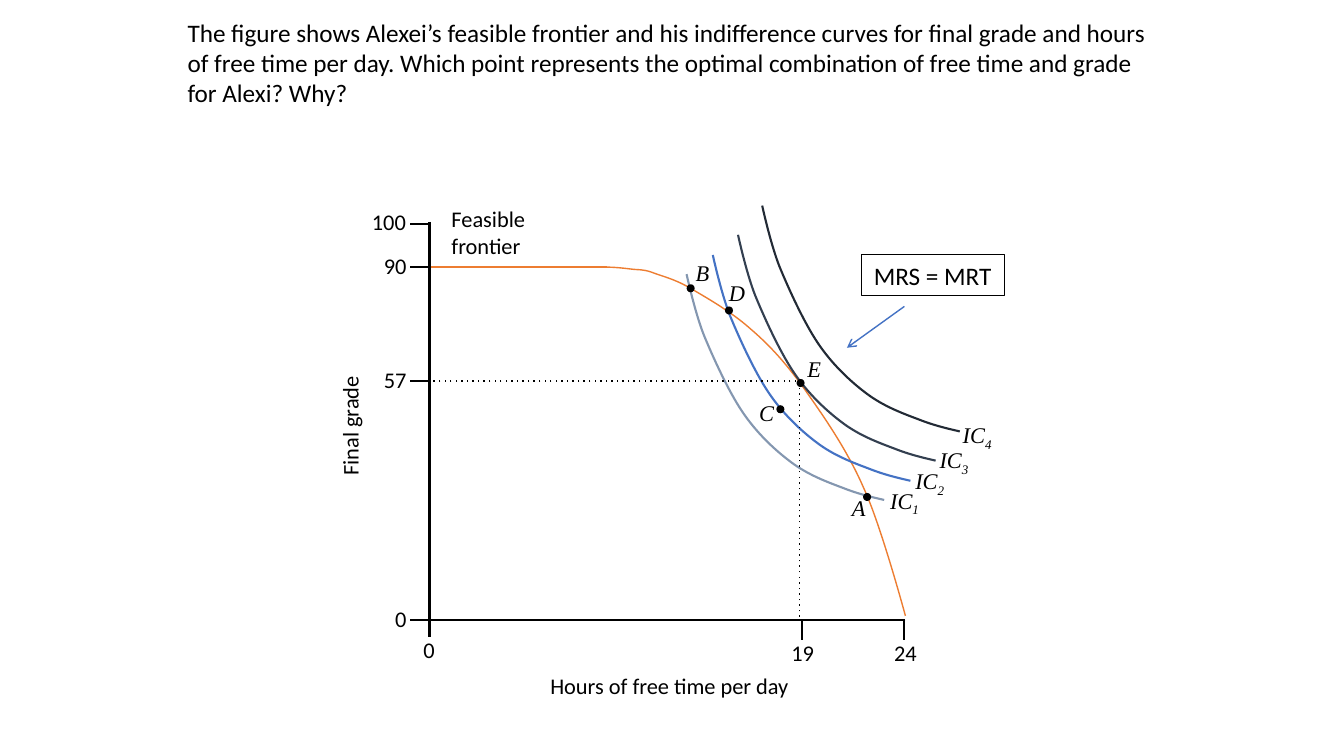
from lxml.etree import SubElement
from pptx import Presentation
from pptx.dml.color import RGBColor as RGB
from pptx.enum.shapes import MSO_CONNECTOR as CONN, MSO_SHAPE as SHAPE
from pptx.enum.text import MSO_ANCHOR as ANCHOR, MSO_AUTO_SIZE as FIT, PP_ALIGN as ALIGN
from pptx.oxml.ns import qn
from pptx.util import Inches, Pt

HEX = {"ink": "000000", "front": "ED7D31", "blue": "4472C4",
       "ic1": "8497B0", "ic3": "333F50", "ic4": "222A35"}
INK = {key: RGB.from_string(val) for key, val in HEX.items()}
SERIF = {"name": "Times New Roman", "italic": True}

deck = Presentation()
deck.slide_width, deck.slide_height = Inches(13.33), Inches(7.5)
slide = deck.slides.add_slide(deck.slide_layouts[5])
shapes = slide.shapes


def write(box, words, align=ALIGN.LEFT, sub="", **style):
    """Fill a shape with words, one paragraph a line, and an optional subscript."""
    frame = box.text_frame
    frame.word_wrap, frame.auto_size = True, FIT.NONE
    frame.text = words
    if sub:
        run = frame.paragraphs[0].add_run()
        run.text = sub
        run.font._element.set("baseline", "-25000")
    look = {"name": "Calibri", "size": Pt(16), **style}
    for para in frame.paragraphs:
        para.alignment = align
        for run in para.runs:
            run.font.color.rgb = INK["ink"]
            for key, val in look.items():
                setattr(run.font, key, val)


def rule(x1, y1, x2, y2, ink="ink", width=1.5):
    """Draw a straight line without a shadow."""
    line = shapes.add_connector(CONN.STRAIGHT, *map(Inches, (x1, y1, x2, y2)))
    line.line.color.rgb, line.line.width = INK[ink], Pt(width)
    SubElement(line._element.spPr, qn("a:effectLst"))
    return line


# Question
title = shapes.title
title.left, title.top, title.width, title.height = map(Inches, (1.76, 0.12, 9.91, 1.01))
write(title, "The figure shows Alexei’s feasible frontier and his indifference curves "
      "for final grade and hours of free time per day. Which point represents the "
      "optimal combination of free time and grade for Alexi? Why?", size=Pt(18))
title.text_frame.vertical_anchor = ANCHOR.TOP

# Frontier and indifference curves: Bezier knots, three to a segment
front = [(6, 2.65), (6.09, 2.65), (6.18, 2.66), (6.26, 2.67), (6.34, 2.68),
         (6.37, 2.67), (6.46, 2.7), (6.56, 2.74), (6.67, 2.76), (6.83, 2.85),
         (7, 2.95), (7.25, 3.09), (7.44, 3.26), (7.64, 3.43), (7.81, 3.62),
         (8, 3.89), (8.19, 4.16), (8.41, 4.48), (8.57, 4.85), (8.74, 5.22),
         (8.98, 6.11), (8.98, 6.11)]
base = [(8.77, 4.96), (8.64, 4.93), (8.51, 4.9), (8.36, 4.84), (8.2, 4.78),
        (8.01, 4.71), (7.84, 4.58), (7.68, 4.46), (7.5, 4.29), (7.36, 4.08),
        (7.22, 3.87), (7.07, 3.54), (6.98, 3.32), (6.89, 3.09), (6.81, 2.72),
        (6.81, 2.72)]
curves = [(front, 0, 0, "front", 1), (base, 0, 0, "ic1", 1.5),
          (base, 0.26, -0.19, "blue", 1.5), (base, 0.51, -0.39, "ic3", 1.5),
          (base, 0.75, -0.68, "ic4", 1.5)]
UNIT = 100  # drawing units to the inch
for knots, dx, dy, ink, width in curves:
    spots = [(round((x + dx) * UNIT), round((y + dy) * UNIT)) for x, y in knots]
    pen = shapes.build_freeform(*spots[0], scale=Inches(1) / UNIT)
    pen.add_line_segments(spots[1:], close=False)
    curve = pen.convert_to_shape()
    trail = next(curve._element.iter(qn("a:path")))
    legs = trail.findall(qn("a:lnTo"))
    for i in range(0, len(legs), 3):
        bend = SubElement(trail, qn("a:cubicBezTo"))
        for leg in legs[i:i + 3]:
            bend.append(leg[0])
            trail.remove(leg)
    curve.fill.background()
    curve.line.color.rgb, curve.line.width = INK[ink], Pt(width)
    curve.shadow.inherit = False
rule(4.25, 2.65, 6.02, 2.65, "front", 1)

# Axes, ticks and guides
rule(4.26, 2.2, 4.26, 6.14)
rule(8.98, 6.15, 4.26, 6.15)
labels = []
for grade, left, y, width in [("100", 3.59, 2.22, 0.61), ("90", 3.71, 2.65, 0.43),
                              ("57", 3.71, 3.78, 0.43), ("0", 3.82, 6.15, 0.32)]:
    rule(4.07, y, 4.26, y)
    labels.append((grade, left, y - 0.2, width, {}))
for hour, x, y, left in [("0", 4.26, 6.12, 4.1), ("19", 7.95, 6.15, 7.75),
                         ("24", 8.97, 6.15, 8.77)]:
    rule(x, y, x, y + 0.2)
    labels.append((hour, left, y + 0.14, 0.43, {}))
for ends in [(7.93, 6.12, 7.93, 3.76), (7.95, 3.78, 4.25, 3.78)]:
    guide = rule(*ends, width=1)
    SubElement(guide.line._get_or_add_ln(), qn("a:prstDash"), val="dot")

# Points
SIZE = 0.08
for name, x, y, left, top in [("A", 8.56, 4.89, 8.35, 4.85), ("B", 6.81, 2.82, 6.8, 2.52),
                              ("C", 7.7, 4.02, 7.43, 3.91), ("D", 7.19, 3.04, 7.13, 2.72),
                              ("E", 7.9, 3.76, 7.91, 3.47)]:
    dot = shapes.add_shape(SHAPE.OVAL, *map(Inches, (x, y, SIZE, SIZE)))
    dot.fill.solid()
    dot.fill.fore_color.rgb = INK["ink"]
    dot.line.fill.background()
    dot.shadow.inherit = False
    labels.append((name, left, top, 0.48, SERIF))

# Labels
for sub, left, top in [("1", 8.73, 4.78), ("2", 8.98, 4.59),
                       ("3", 9.22, 4.38), ("4", 9.45, 4.13)]:
    labels.append(("IC", left, top, 0.51, {"sub": sub, **SERIF}))
mid = {"align": ALIGN.CENTER}
labels += [("Feasible\nfrontier", 4.38, 1.99, 3.23, {}),
           ("Hours of free time per day", 4.97, 6.62, 3.34, mid),
           ("Final grade", 1.8, 4.04, 3.34, mid)]
for words, left, top, width, style in labels:
    tall = 0.64 if "\n" in words else 0.37
    box = shapes.add_textbox(*map(Inches, (left, top, width, tall)))
    write(box, words, **style)
    if width < 1:
        box.text_frame.margin_right = 0
    if words == "Final grade":
        box.rotation = 270

# Callout
note = shapes.add_shape(SHAPE.RECTANGLE, *map(Inches, (8.54, 2.53, 1.42, 0.4)))
note.fill.background()
note.line.color.rgb, note.line.width = INK["ink"], Pt(0.75)
note.shadow.inherit = False
write(note, "MRS = MRT", ALIGN.CENTER, size=Pt(18))
arrow = rule(8.97, 3.04, 8.4, 3.45, "blue", 1)
SubElement(arrow.line._get_or_add_ln(), qn("a:tailEnd"), type="arrow")

deck.save("out.pptx")
